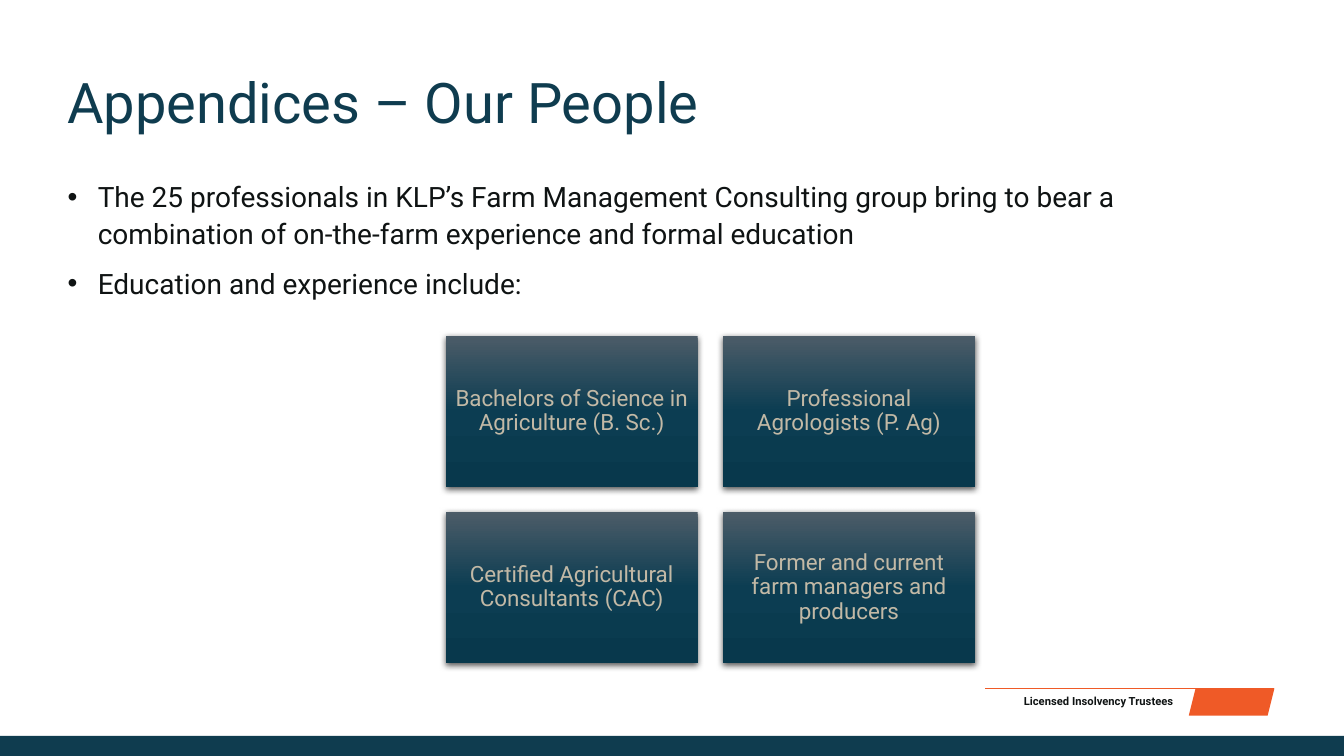
from copy import deepcopy
from typing import NamedTuple

from lxml import etree
from pptx import Presentation
from pptx.dml.color import RGBColor
from pptx.enum.shapes import MSO_CONNECTOR, MSO_SHAPE
from pptx.enum.text import MSO_ANCHOR, PP_ALIGN
from pptx.oxml.ns import qn
from pptx.util import Emu, Pt

PX = 9144  # 100 px to the inch
FONT = "Roboto"
LEFT, CENTER, RIGHT = PP_ALIGN.LEFT, PP_ALIGN.CENTER, PP_ALIGN.RIGHT
TOP, MIDDLE = MSO_ANCHOR.TOP, MSO_ANCHOR.MIDDLE
RECT, PARALLELOGRAM = MSO_SHAPE.RECTANGLE, MSO_SHAPE.PARALLELOGRAM
STRAIGHT = MSO_CONNECTOR.STRAIGHT

NAVY = RGBColor(0x0F, 0x3C, 0x4F)
ORANGE = RGBColor(0xEF, 0x5A, 0x27)
INK = RGBColor(0x0F, 0x13, 0x13)
SAND = RGBColor(0xC2, 0xB9, 0xA6)
CARD_STOPS = [
    (0.0, RGBColor(0x4C, 0x5C, 0x68)),
    (0.5, RGBColor(0x0C, 0x3D, 0x52)),
    (1.0, RGBColor(0x08, 0x38, 0x4C)),
]


class Box(NamedTuple):
    x: int
    y: int
    w: int
    h: int

    def emu(self) -> list[Emu]:
        return [Emu(v * PX) for v in self]


class Style(NamedTuple):
    size: int
    color: RGBColor
    align: PP_ALIGN = LEFT
    bold: bool = False
    spacing: float = 1.0
    before: int = 0
    bullet: bool = False


class Label(NamedTuple):
    box: Box
    lines: list[str]
    style: Style
    pad_y: int = 0


TITLE = Style(40, NAVY, spacing=0.9)
BODY = Style(20, INK, spacing=1.1, before=9, bullet=True)
CARD = Style(16, SAND, CENTER, spacing=0.9)
FOOTER = Style(8, INK, RIGHT, bold=True)

LABELS = [
    Label(Box(67, 75, 956, 80), ["Appendices – Our People"], TITLE),
    Label(Box(67, 175, 1200, 495), [
        "The 25 professionals in KLP’s Farm Management Consulting group bring "
        "to bear a combination of on-the-farm experience and formal education",
        "Education and experience include:",
    ], BODY),
    Label(Box(958, 684, 206, 24), ["Licensed Insolvency Trustees"], FOOTER, 5),
]

CARDS = [
    "Bachelors of Science in Agriculture (B. Sc.)",
    "Professional Agrologists (P. Ag)",
    "Certified Agricultural Consultants (CAC)",
    "Former and current farm managers and producers",
]
CARD_X, CARD_Y, CARD_W, CARD_H, CARD_GAP = 442, 333, 250, 150, 25


def write(s, lines: list[str], style: Style, anchor: MSO_ANCHOR,
          pad_x: int, pad_y: int) -> None:
    tf = s.text_frame
    tf.word_wrap = True
    tf.vertical_anchor = anchor
    tf.margin_left = tf.margin_right = Emu(pad_x * PX)
    tf.margin_top = tf.margin_bottom = Emu(pad_y * PX)
    tf.text = "\n".join(lines)
    for i, p in enumerate(tf.paragraphs):
        p.alignment = style.align
        p.line_spacing = style.spacing
        if style.bullet:
            pPr = p._p.get_or_add_pPr()
            pPr.set("marL", str(30 * PX))
            pPr.set("indent", str(-30 * PX))
            etree.SubElement(pPr, qn("a:buFont"), typeface="Arial")
            etree.SubElement(pPr, qn("a:buChar"), char="•")
        if i and style.before:
            p.space_before = Pt(style.before)
        for r in p.runs:
            r.font.name = FONT
            r.font.size = Pt(style.size)
            r.font.bold = style.bold
            r.font.color.rgb = style.color


def add_block(slide, kind: MSO_SHAPE, box: Box, color: RGBColor) -> None:
    s = slide.shapes.add_shape(kind, *box.emu())
    s.shadow.inherit = False
    s.fill.solid()
    s.fill.fore_color.rgb = color
    s.line.fill.background()


def add_rule(slide, x1: int, x2: int, y: int, color: RGBColor) -> None:
    s = slide.shapes.add_connector(STRAIGHT, *Box(x1, y, x2, y).emu())
    s.line.color.rgb = color
    s.line.width = Pt(1)
    etree.SubElement(s._element.spPr, qn("a:effectLst"))


def add_label(slide, label: Label) -> None:
    s = slide.shapes.add_textbox(*label.box.emu())
    write(s, label.lines, label.style, TOP, 0, label.pad_y)


def add_card(slide, box: Box, text: str) -> None:
    s = slide.shapes.add_shape(RECT, *box.emu())
    s.line.fill.background()

    # Three-stop gradient, running downwards
    s.fill.gradient()
    s.fill.gradient_angle = 270
    stops = s._element.spPr.find(".//" + qn("a:gsLst"))
    stops.insert(1, deepcopy(stops[0]))
    for stop, (position, color) in zip(s.fill.gradient_stops, CARD_STOPS):
        stop.position = position
        stop.color.rgb = color

    # Soft shadow below
    s.shadow.inherit = False
    effects = s._element.spPr.find(qn("a:effectLst"))
    shadow = etree.SubElement(
        effects, qn("a:outerShdw"), blurRad=str(Pt(4.5)), dist=str(Pt(1.5)),
        dir="5400000", algn="ctr", rotWithShape="0")
    black = etree.SubElement(shadow, qn("a:srgbClr"), val="000000")
    etree.SubElement(black, qn("a:alpha"), val="63000")

    write(s, [text], CARD, MIDDLE, 7, 7)


def main() -> None:
    prs = Presentation()
    prs.slide_width, prs.slide_height = Emu(1333 * PX), Emu(750 * PX)
    slide = prs.slides.add_slide(prs.slide_layouts[6])

    # Footer band, plain tag and rule
    add_block(slide, RECT, Box(0, 730, 1333, 20), NAVY)
    add_block(slide, PARALLELOGRAM, Box(1179, 683, 85, 27), ORANGE)
    add_rule(slide, 977, 1264, 683, ORANGE)

    # Title, bullets and footer text
    for label in LABELS:
        add_label(slide, label)

    # Two-by-two grid of cards
    for i, text in enumerate(CARDS):
        row, col = divmod(i, 2)
        x = CARD_X + col * (CARD_W + CARD_GAP)
        y = CARD_Y + row * (CARD_H + CARD_GAP)
        add_card(slide, Box(x, y, CARD_W, CARD_H), text)

    prs.save("out.pptx")


if __name__ == "__main__":
    main()
